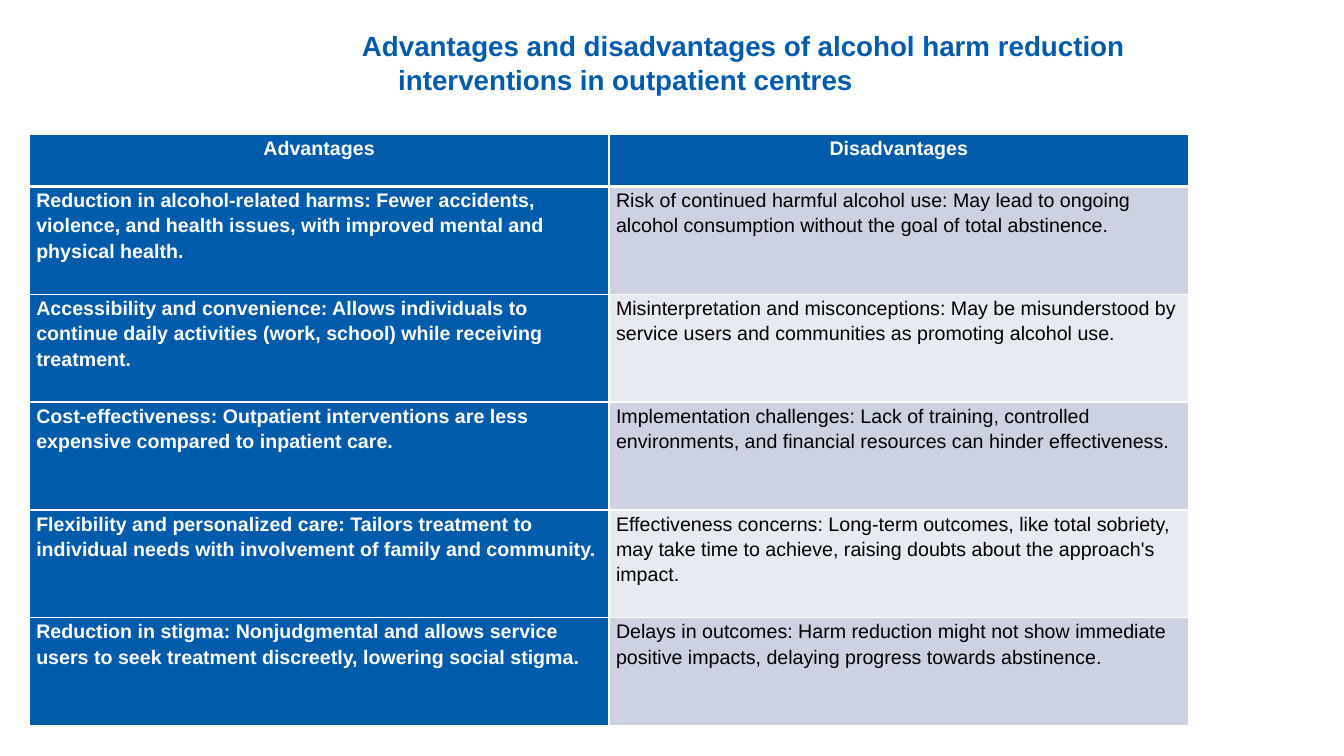
from lxml import etree
from pptx import Presentation
from pptx.dml.color import RGBColor
from pptx.enum.text import MSO_ANCHOR, PP_ALIGN
from pptx.oxml.ns import qn
from pptx.util import Inches, Pt

CENTER, LEFT = PP_ALIGN.CENTER, PP_ALIGN.LEFT
MIDDLE, TOP = MSO_ANCHOR.MIDDLE, MSO_ANCHOR.TOP

BLUE, WHITE, BLACK = "005BAA", "FFFFFF", "000000"
BANDS = ["CCD2E2", "E7EAF1"]
TABLE_WIDTH, HEADER_HEIGHT, ROW_HEIGHT = 11.5, 0.52, 1.07

ROWS = [
    ("Advantages", "Disadvantages"),
    ("Reduction in alcohol-related harms: Fewer accidents, violence, and health issues, "
     "with improved mental and physical health.",
     "Risk of continued harmful alcohol use: May lead to ongoing alcohol consumption "
     "without the goal of total abstinence."),
    ("Accessibility and convenience: Allows individuals to continue daily activities "
     "(work, school) while receiving treatment.",
     "Misinterpretation and misconceptions: May be misunderstood by service users and "
     "communities as promoting alcohol use."),
    ("Cost-effectiveness: Outpatient interventions are less expensive compared to "
     "inpatient care.",
     "Implementation challenges: Lack of training, controlled environments, and "
     "financial resources can hinder effectiveness."),
    ("Flexibility and personalized care: Tailors treatment to individual needs with "
     "involvement of family and community.",
     "Effectiveness concerns: Long-term outcomes, like total sobriety, may take time to "
     "achieve, raising doubts about the approach's impact."),
    ("Reduction in stigma: Nonjudgmental and allows service users to seek treatment "
     "discreetly, lowering social stigma.",
     "Delays in outcomes: Harm reduction might not show immediate positive impacts, "
     "delaying progress towards abstinence."),
]


def add_span(para, text, size, color, bold):
    span = para.add_run()
    span.text = text
    span.font.name = "Arial"
    span.font.size = Pt(size)
    span.font.bold = bold
    span.font.color.rgb = RGBColor.from_string(color)


def add_border(cell, side, width):
    """Draw one white cell edge; side is L, R, T or B, width is in points."""
    line = etree.SubElement(cell._tc.get_or_add_tcPr(), qn(f"a:ln{side}"), w=str(Pt(width)))
    fill = etree.SubElement(line, qn("a:solidFill"))
    etree.SubElement(fill, qn("a:srgbClr"), val=WHITE)


deck = Presentation()
deck.slide_width, deck.slide_height = Inches(13.33), Inches(7.5)
page = deck.slides.add_slide(deck.slide_layouts[6])

# Title: one paragraph whose second line hangs to the right of the first
title = page.shapes.add_textbox(Inches(0.49), Inches(0.12), Inches(11.5), Inches(0.86)).text_frame
title.word_wrap = True
title.vertical_anchor = MIDDLE
title.margin_left = title.margin_right = title.margin_bottom = 0
title.margin_top = Inches(0.13)
para = title.paragraphs[0]
para.alignment = LEFT
para.line_spacing = Pt(24.3)
indents = para._p.get_or_add_pPr()
indents.set("marL", str(Inches(3.46)))
indents.set("indent", str(Inches(-0.36)))
add_span(para, "Advantages and disadvantages of alcohol harm reduction "
               "interventions in outpatient centres", 19.8, BLUE, True)

# Comparison table
table = page.shapes.add_table(
    len(ROWS), 2, Inches(0.29), Inches(1.33), Inches(TABLE_WIDTH),
    Inches(HEADER_HEIGHT + ROW_HEIGHT * (len(ROWS) - 1))).table
for column in table.columns:
    column.width = Inches(TABLE_WIDTH / 2)

for row, texts in enumerate(ROWS):
    header = row == 0
    table.rows[row].height = Inches(HEADER_HEIGHT if header else ROW_HEIGHT)
    for column, text in enumerate(texts):
        strong = header or column == 0
        cell = table.cell(row, column)
        cell.vertical_anchor = TOP
        cell.margin_left = cell.margin_right = Inches(0.07)
        cell.margin_top = cell.margin_bottom = 0
        for side in "LRTB":
            under_header = (row, side) in [(0, "B"), (1, "T")]
            add_border(cell, side, 3 if under_header else 1)
        cell.fill.solid()
        cell.fill.fore_color.rgb = RGBColor.from_string(BLUE if strong else BANDS[(row - 1) % 2])
        para = cell.text_frame.paragraphs[0]
        para.alignment = CENTER if header else LEFT
        para.line_spacing = 1.15
        para.space_after = Pt(8)
        add_span(para, text, 14, WHITE if strong else BLACK, strong)

deck.save("out.pptx")
